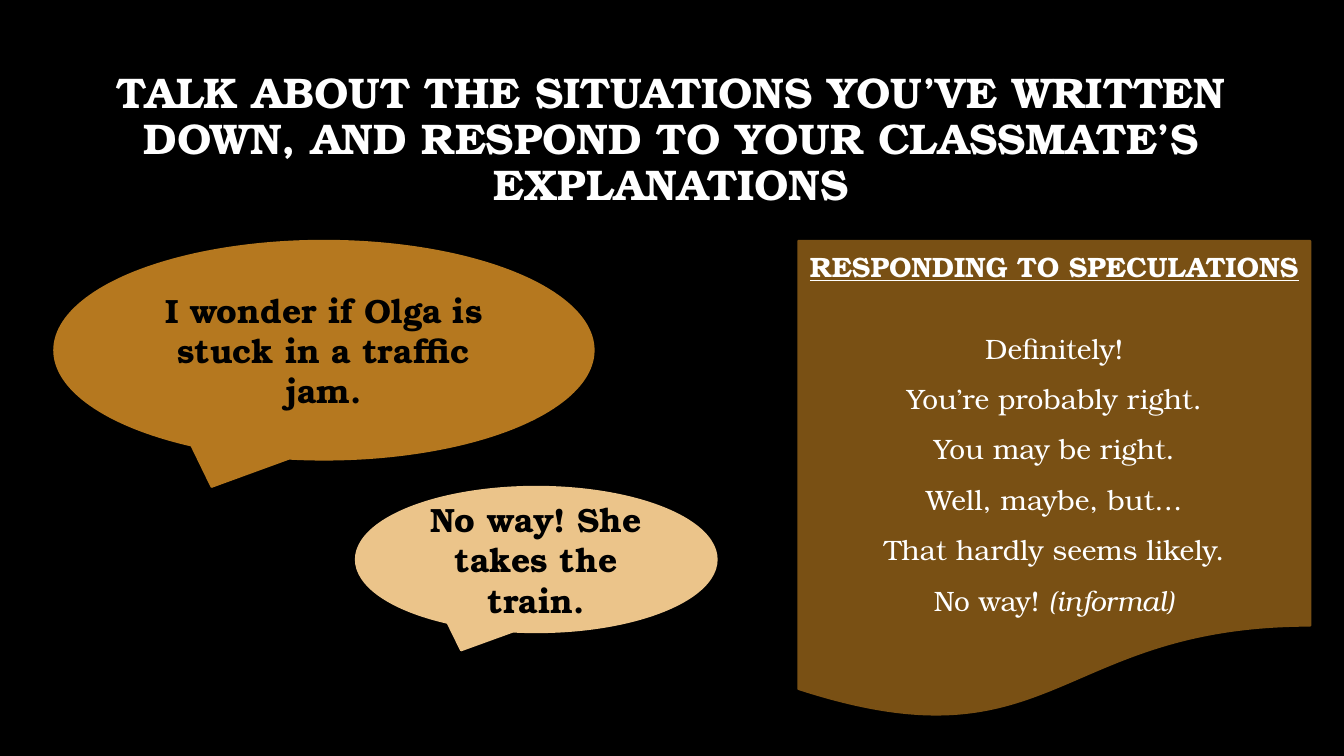
"""Build a speaking-practice slide with two speech bubbles and a phrase list."""
import pptx
import pptx.util
import pptx.dml.color
import pptx.enum.shapes
import pptx.enum.text

Cm = pptx.util.Cm
Pt = pptx.util.Pt
SHAPES = pptx.enum.shapes.MSO_SHAPE


def color(value):
    return pptx.dml.color.RGBColor.from_string(value)


def format_text(shape, size, text_color, bold):
    frame = shape.text_frame
    frame.word_wrap = True
    frame.vertical_anchor = pptx.enum.text.MSO_ANCHOR.MIDDLE
    for paragraph in frame.paragraphs:
        paragraph.alignment = pptx.enum.text.PP_ALIGN.CENTER
        for run in paragraph.runs:
            run.font.name = "TeX Gyre Bonum"
            run.font.size = Pt(size)
            run.font.bold = bold
            run.font.color.rgb = color(text_color)


presentation = pptx.Presentation()
presentation.slide_width = Cm(33.87)
presentation.slide_height = Cm(19.05)
slide = presentation.slides.add_slide(presentation.slide_layouts[6])
slide.background.fill.solid()
slide.background.fill.fore_color.rgb = color("000000")

title = slide.shapes.add_textbox(Cm(2.54), Cm(1.7), Cm(28.75), Cm(3.68))
title.text_frame.text = (
    "TALK ABOUT THE SITUATIONS YOU’VE WRITTEN DOWN, "
    "AND RESPOND TO YOUR CLASSMATE’S EXPLANATIONS"
)
format_text(title, 30.6, "FFFFFF", True)
title.text_frame.paragraphs[0].line_spacing = 0.9

phrases = [
    "RESPONDING TO SPECULATIONS",
    "Definitely!",
    "You’re probably right.",
    "You may be right.",
    "Well, maybe, but…",
    "That hardly seems likely.",
    "No way! ",
]
panels = [
    (SHAPES.OVAL_CALLOUT, 1.37, 6.07, 13.59, 5.51, "B5781F",
     "I wonder if Olga is stuck in a traffic jam.", 24, "000000", True),
    (SHAPES.OVAL_CALLOUT, 8.97, 12.27, 9.09, 3.66, "EBC48A",
     "No way! She takes the train.", 24, "000000", True),
    (SHAPES.FLOWCHART_DOCUMENT, 20.12, 6.07, 12.9, 12.09, "795014",
     "\n".join(phrases), 20, "FFFFFF", False),
]
for kind, left, top, width, height, fill, text, size, text_color, bold in panels:
    panel = slide.shapes.add_shape(kind, Cm(left), Cm(top), Cm(width), Cm(height))
    panel.shadow.inherit = False
    panel.fill.solid()
    panel.fill.fore_color.rgb = color(fill)
    panel.line.color.rgb = color(fill)
    panel.line.width = Pt(1.5)
    panel.text_frame.text = text
    format_text(panel, size, text_color, bold)

phrase_list = panel
heading, *responses = phrase_list.text_frame.paragraphs
informal = responses[-1].add_run()
informal.text = "(informal)"
format_text(phrase_list, 20, "FFFFFF", False)
informal.font.italic = True
heading.runs[0].font.bold = True
heading.runs[0].font.underline = True
for response in responses:
    response.line_spacing = 1.5
responses[0].space_before = Pt(22)

presentation.save("out.pptx")
